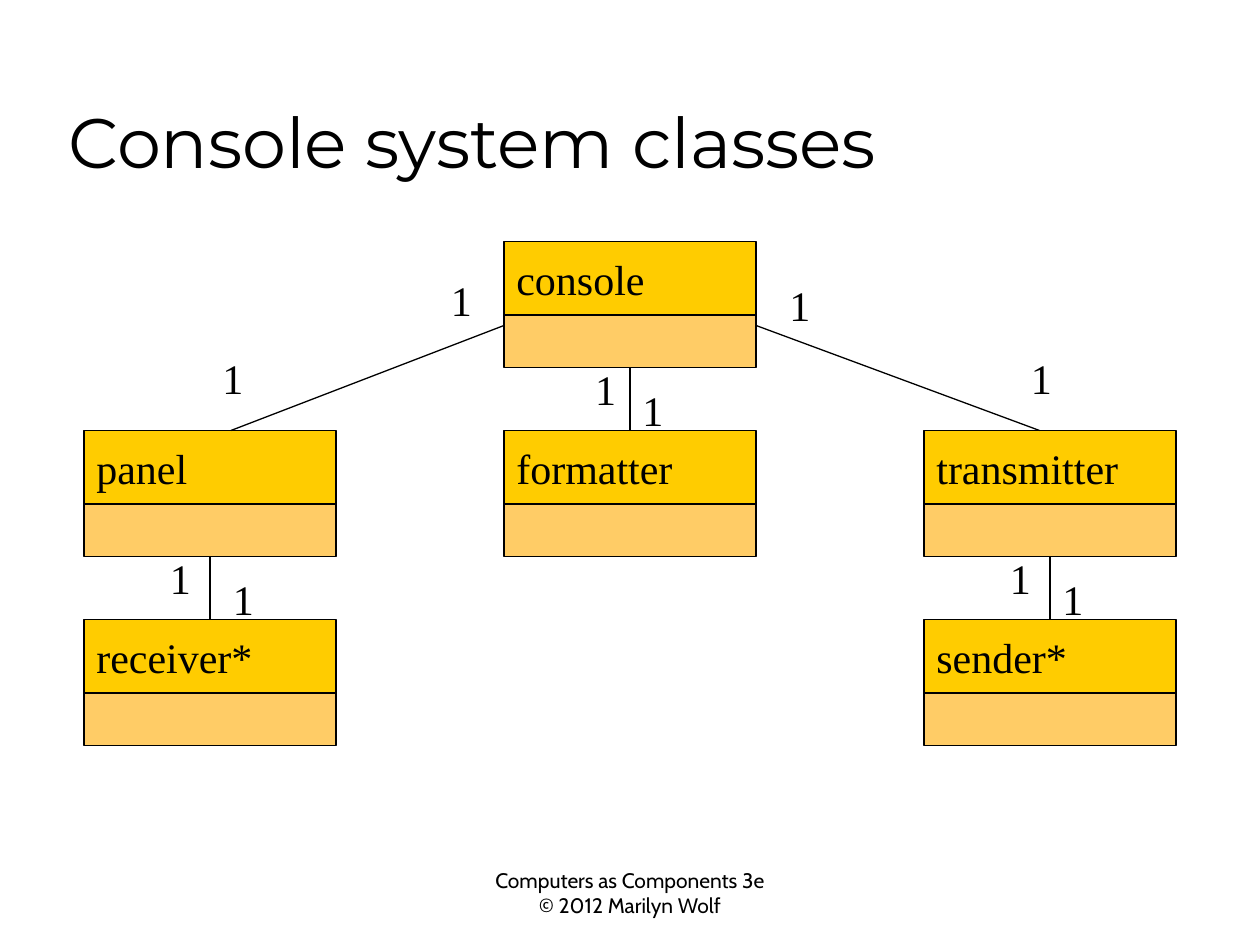
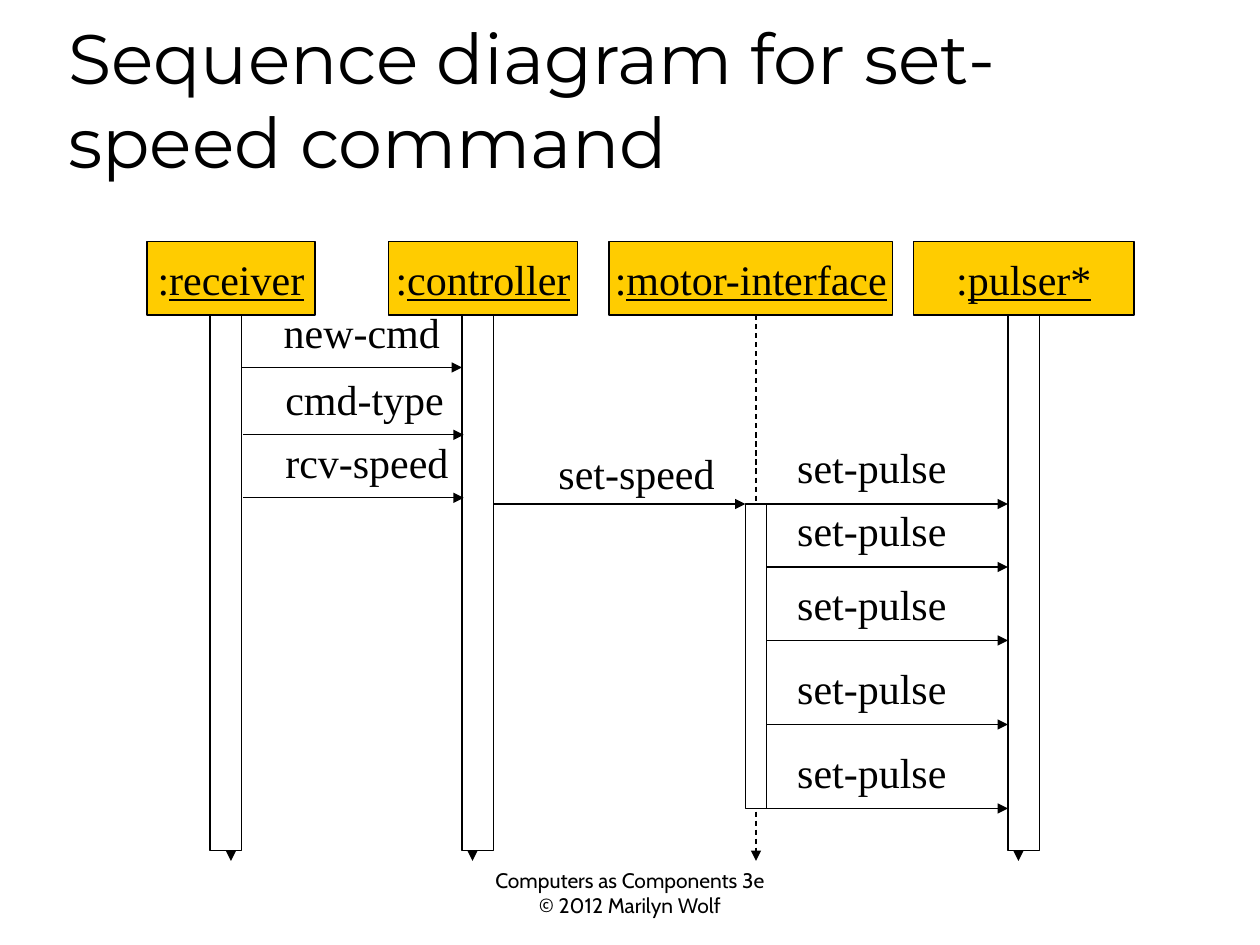
import pptx
import pptx.util
import pptx.dml.color
import pptx.enum.dml
import pptx.enum.shapes
import pptx.enum.text
import pptx.oxml.ns
from lxml import etree

Pt = pptx.util.Pt
Align = pptx.enum.text.PP_ALIGN
Anchor = pptx.enum.text.MSO_ANCHOR

# Shared look
BLACK, WHITE, GOLD, SAND = "000000", "FFFFFF", "FFCC00", "FFCC66"
LINE_WIDTH = 0.75
TITLE_FONT = {"name": "Montserrat", "size": Pt(40)}
LABEL_FONT = {"name": "Times New Roman", "size": Pt(24)}
FOOTER_FONT = {"name": "Cabin", "size": Pt(12)}
FOOTER_LINES = ["Computers as Components 3e", "© 2012 Marilyn Wolf"]

# Class and object boxes
HEAD_TOP, HEAD_HEIGHT, BODY_HEIGHT = 138, 42, 30
CLASS_LEFT, CLASS_WIDTH = 48, 144
COLUMN_STEP, ROW_STEP = 240, 108
LABEL_HEIGHT = 36


def color(hex_text):
    return pptx.dml.color.RGBColor.from_string(hex_text)


def style_line(line):
    line.color.rgb = color(BLACK)
    line.width = Pt(LINE_WIDTH)


def add_span(para, text, font, underline=False):
    span = para.add_run()
    span.text = text
    for name, value in {**font, "underline": underline}.items():
        setattr(span.font, name, value)
    span.font.color.rgb = color(BLACK)


def add_text(page, left, top, width, height, lines, font,
             align=Align.LEFT, **frame_format):
    box = page.shapes.add_textbox(Pt(left), Pt(top), Pt(width), Pt(height))
    frame = box.text_frame
    for name, value in frame_format.items():
        setattr(frame, name, value)
    for index, text in enumerate(lines):
        para = frame.add_paragraph() if index else frame.paragraphs[0]
        para.alignment = align
        add_span(para, text, font)


def add_label(page, text, left, top, width):
    add_text(page, left, top, width, LABEL_HEIGHT, [text], LABEL_FONT,
             word_wrap=False,
             auto_size=pptx.enum.text.MSO_AUTO_SIZE.SHAPE_TO_FIT_TEXT)


def add_rect(page, left, top, width, height, fill):
    rect = page.shapes.add_shape(pptx.enum.shapes.MSO_SHAPE.RECTANGLE,
                                 Pt(left), Pt(top), Pt(width), Pt(height))
    rect.shadow.inherit = False
    rect.fill.solid()
    rect.fill.fore_color.rgb = color(fill)
    style_line(rect.line)
    return rect


def add_head(page, left, top, width, align):
    """Draw a gold name box and return its paragraph."""
    frame = add_rect(page, left, top, width, HEAD_HEIGHT, GOLD).text_frame
    frame.word_wrap = False
    frame.vertical_anchor = Anchor.MIDDLE
    para = frame.paragraphs[0]
    para.alignment = align
    return para


def add_line(page, x1, y1, x2, y2, arrow=False, dashed=False):
    link = page.shapes.add_connector(pptx.enum.shapes.MSO_CONNECTOR.STRAIGHT,
                                     Pt(x1), Pt(y1), Pt(x2), Pt(y2))
    style_line(link.line)
    if dashed:
        link.line.dash_style = pptx.enum.dml.MSO_LINE.DASH
    qn = pptx.oxml.ns.qn
    if arrow:
        etree.SubElement(link.line._get_or_add_ln(), qn("a:tailEnd"), type="triangle")
    etree.SubElement(link._element.spPr, qn("a:effectLst"))


def add_page(deck, title):
    page = deck.slides.add_slide(deck.slide_layouts[6])
    add_text(page, 264, 492, 192, 36, FOOTER_LINES, FOOTER_FONT,
             Align.CENTER, word_wrap=True)
    add_text(page, 32, 18, 612, 90, [title], TITLE_FONT,
             word_wrap=True, vertical_anchor=Anchor.BOTTOM)
    return page


def add_class(page, name, column, row):
    left = CLASS_LEFT + column * COLUMN_STEP
    top = HEAD_TOP + row * ROW_STEP
    para = add_head(page, left, top, CLASS_WIDTH, Align.LEFT)
    add_span(para, name, LABEL_FONT)
    add_rect(page, left, top + HEAD_HEIGHT, CLASS_WIDTH, BODY_HEIGHT, SAND)


def add_class_page(deck):
    page = add_page(deck, "Console system classes")
    classes = [("console", 1, 0), ("panel", 0, 1), ("formatter", 1, 1),
               ("transmitter", 2, 1), ("receiver*", 0, 2), ("sender*", 2, 2)]
    for name, column, row in classes:
        add_class(page, name, column, row)

    # Associations
    for ends in [(288, 186, 132, 246), (432, 186, 594, 246),
                 (360, 210, 360, 246), (120, 318, 120, 354),
                 (600, 318, 600, 354)]:
        add_line(page, *ends)

    # Multiplicities
    for left, top in [(250.5, 153.5), (120, 198), (444, 156), (582, 198),
                      (333, 204), (360, 216), (90, 312), (126, 324),
                      (570, 312), (600, 324)]:
        add_label(page, "1", left, top, 26.5)


def add_sequence_page(deck):
    page = add_page(deck, "Sequence diagram for set-speed command")
    bar_top = HEAD_TOP + HEAD_HEIGHT

    # Objects: name, head left and width, lifeline x
    objects = [("receiver", 84, 96, 132), ("controller", 222, 108, 270),
               ("motor-interface", 348, 162, 432), ("pulser*", 522, 126, 582)]
    for name, left, width, lifeline in objects:
        para = add_head(page, left, HEAD_TOP, width, Align.CENTER)
        add_span(para, ":", LABEL_FONT)
        add_span(para, name, LABEL_FONT, underline=True)
        add_line(page, lifeline, bar_top, lifeline, 492, arrow=True, dashed=True)

    # Activation bars: left, top, width, bottom
    for left, top, width, bottom in [(120, bar_top, 18, 486),
                                     (264, bar_top, 18, 486),
                                     (426, 288, 12, 462),
                                     (576, bar_top, 18, 486)]:
        add_rect(page, left, top, width, bottom - top, WHITE)

    # Messages: text, label left, top and width, arrow start, end and y
    messages = [("new-cmd", 155, 171.5, 103.5, 138, 264, 210),
                ("cmd-type", 156, 210, 105, 139, 265, 248.5),
                ("rcv-speed", 156, 246, 108, 139, 265, 284.5),
                ("set-speed", 312, 252, 103.5, 282, 426, 288)]
    messages += [("set-pulse", 448.5, y - 39, 100, 438, 576, y)
                 for y in (288, 324, 366, 414, 462)]
    for text, left, top, width, start, end, y in messages:
        add_label(page, text, left, top, width)
        add_line(page, start, y, end, y, arrow=True)


def main():
    deck = pptx.Presentation()
    deck.slide_width, deck.slide_height = Pt(720), Pt(540)
    add_class_page(deck)
    add_sequence_page(deck)
    deck.save("out.pptx")


if __name__ == "__main__":
    main()
